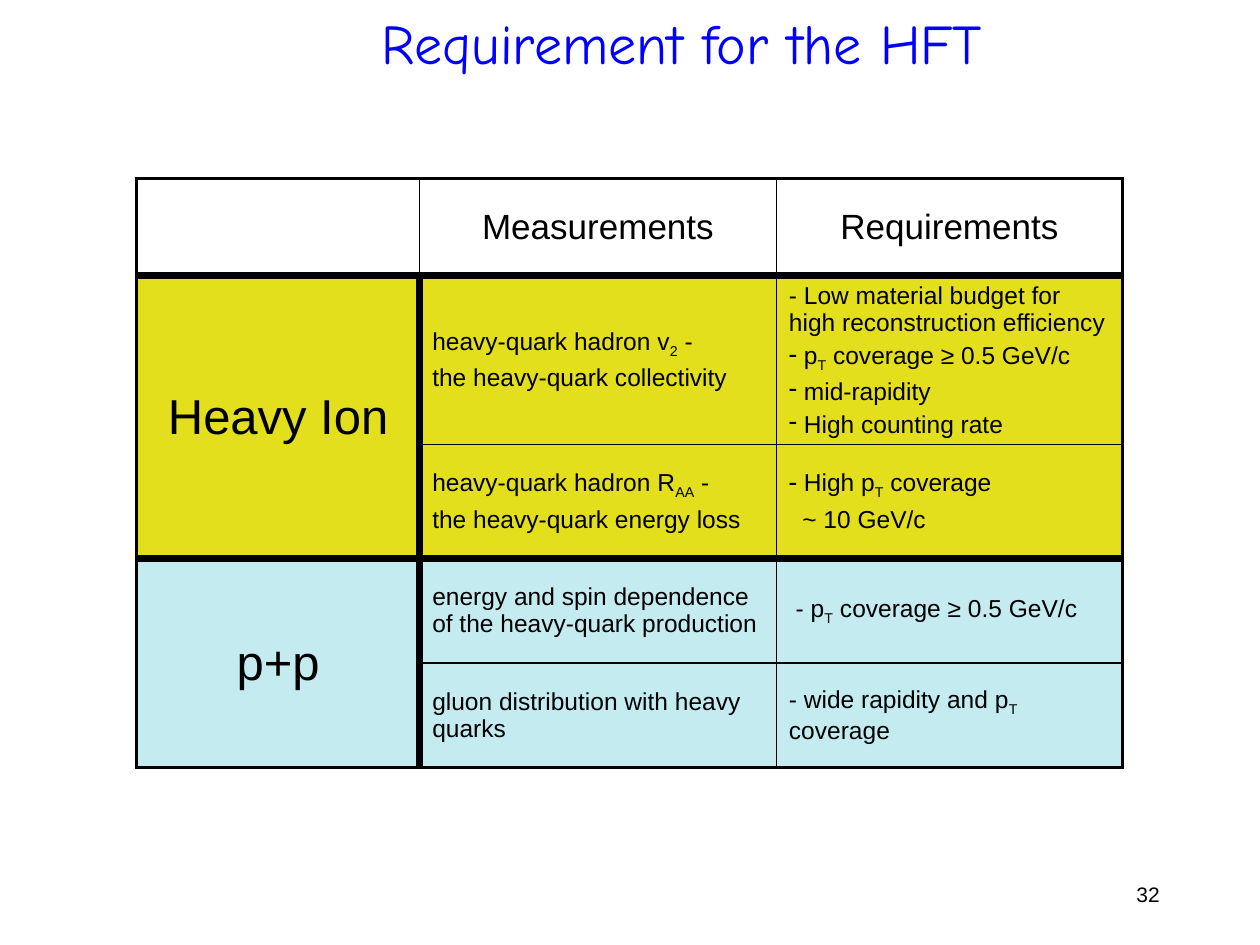
import pptx
import pptx.util
import pptx.dml.color
import pptx.enum.text
import pptx.oxml.ns
import lxml.etree

Cm, Pt = pptx.util.Cm, pptx.util.Pt
ANCHOR = pptx.enum.text.MSO_ANCHOR
ALIGN = pptx.enum.text.PP_ALIGN

COLORS = {"black": "000000", "title": "0000FF", "heavy_ion": "E3DF1C", "pp": "C4EBF0"}
COL_WIDTHS = [5.71, 7.19, 6.98]
ROW_HEIGHTS = [1.96, 3.4, 2.29, 2.11, 2.11]
OUTER, INNER, HEAVY = 2.25, 1, 4.5
GROUP_SPAN = 2  # rows in each collision group

# "|" encloses a subscript, a leading "*" makes a dash bullet, ">" an indent
ROWS = [
    ["", "Measurements", "Requirements"],
    ["Heavy Ion",
     "heavy-quark hadron v|2| -\nthe heavy-quark collectivity",
     "- Low material budget for high reconstruction efficiency\n"
     "* p|T| coverage ≥ 0.5 GeV/c\n* mid-rapidity\n* High counting rate"],
    [None,
     "heavy-quark hadron R|AA| -\nthe heavy-quark energy loss",
     "* High p|T| coverage\n>~ 10 GeV/c"],
    ["p+p",
     "energy and spin dependence of the heavy-quark production",
     " - p|T| coverage ≥ 0.5 GeV/c"],
    [None,
     "gluon distribution with heavy quarks",
     "- wide rapidity and p|T| coverage"],
]


def rgb(name):
    return pptx.dml.color.RGBColor.from_string(COLORS[name])


def sub(parent, tag, **attrs):
    return lxml.etree.SubElement(parent, pptx.oxml.ns.qn(tag), **attrs)


def write(tf, text, size=14, font="Arial", color="black", align=ALIGN.LEFT, before=0):
    """Fill a text frame, one paragraph a line; before is a percentage."""
    for i, line in enumerate(text.split("\n")):
        p = tf.paragraphs[0] if i == 0 else tf.add_paragraph()
        p.alignment = align
        pPr = p._p.get_or_add_pPr()
        if before:
            sub(sub(pPr, "a:spcBef"), "a:spcPct", val=str(before * 1000))
        if line.startswith("*"):
            sub(pPr, "a:buFontTx")
            sub(pPr, "a:buChar", char="-")
        elif line.startswith(">"):
            pPr.set("marL", str(Cm(0.27)))
        for j, part in enumerate(line.lstrip("*>").split("|")):
            if not part:
                continue
            r = p.add_run()
            r.text = part
            r.font.size, r.font.name = Pt(size), font
            r.font.color.rgb = rgb(color)
            if j % 2:
                r._r.get_or_add_rPr().set("baseline", "-25000")


def add_text(s, text, left, top, width, height, anchor=ANCHOR.TOP, **fmt):
    tf = s.shapes.add_textbox(Cm(left), Cm(top), Cm(width), Cm(height)).text_frame
    tf.word_wrap = True
    tf.vertical_anchor = anchor
    write(tf, text, **fmt)


def row_line(i):
    """Weight of the horizontal line above row i."""
    if i in (0, len(ROWS)):
        return OUTER
    return HEAVY if i % GROUP_SPAN else INNER


def col_line(j, row):
    """Weight of the vertical line left of column j."""
    if j in (0, len(COL_WIDTHS)):
        return OUTER
    return HEAVY if j == 1 and row > 0 else INNER


def set_borders(cell, **weights):
    tcPr = cell._tc.get_or_add_tcPr()
    for side, weight in weights.items():
        ln = sub(tcPr, "a:ln" + side, w=str(Pt(weight)))
        sub(sub(ln, "a:solidFill"), "a:srgbClr", val=COLORS["black"])


def style_cell(cell, i, j):
    text = ROWS[i][j]
    weights = {"L": col_line(j, i), "R": col_line(j + 1, i)}
    if text is not None:
        weights["T"] = row_line(i)
    weights["B"] = row_line(i + (GROUP_SPAN if cell.is_merge_origin else 1))
    set_borders(cell, **weights)
    if i == 0:
        cell.fill.background()
    else:
        cell.fill.solid()
        cell.fill.fore_color.rgb = rgb("heavy_ion" if i <= GROUP_SPAN else "pp")
    cell.vertical_anchor = ANCHOR.MIDDLE
    if text:
        heading = i == 0 or j == 0
        size = 20 if i == 0 else 28 if j == 0 else 14
        write(cell.text_frame, text, size=size, before=20,
              align=ALIGN.CENTER if heading else ALIGN.LEFT)


def add_requirements_table(s, left, top):
    tbl = s.shapes.add_table(len(ROWS), len(COL_WIDTHS), Cm(left), Cm(top),
                             Cm(sum(COL_WIDTHS)), Cm(sum(ROW_HEIGHTS))).table
    tbl.first_row = tbl.horz_banding = False
    for col, width in zip(tbl.columns, COL_WIDTHS):
        col.width = Cm(width)
    for row, height in zip(tbl.rows, ROW_HEIGHTS):
        row.height = Cm(height)
    for i in range(1, len(ROWS), GROUP_SPAN):
        tbl.cell(i, 0).merge(tbl.cell(i + GROUP_SPAN - 1, 0))
    for i in range(len(ROWS)):
        for j in range(len(COL_WIDTHS)):
            style_cell(tbl.cell(i, j), i, j)
    # The fullest cell starts at the top
    tbl.cell(1, 2).vertical_anchor = ANCHOR.TOP


def main():
    prs = pptx.Presentation()
    prs.slide_width, prs.slide_height = Cm(25.4), Cm(19.05)
    s = prs.slides.add_slide(prs.slide_layouts[6])

    # Table of measurements and requirements
    add_requirements_table(s, 2.75, 3.6)

    # Title and page number
    add_text(s, "Requirement for the HFT", 2.96, 0, 21.59, 1.7, anchor=ANCHOR.MIDDLE,
             size=32, font="Comic Neue", color="title", align=ALIGN.CENTER)
    add_text(s, "32", 22.66, 17.65, 1.47, 1.02, size=12)

    prs.save("out.pptx")


if __name__ == "__main__":
    main()
